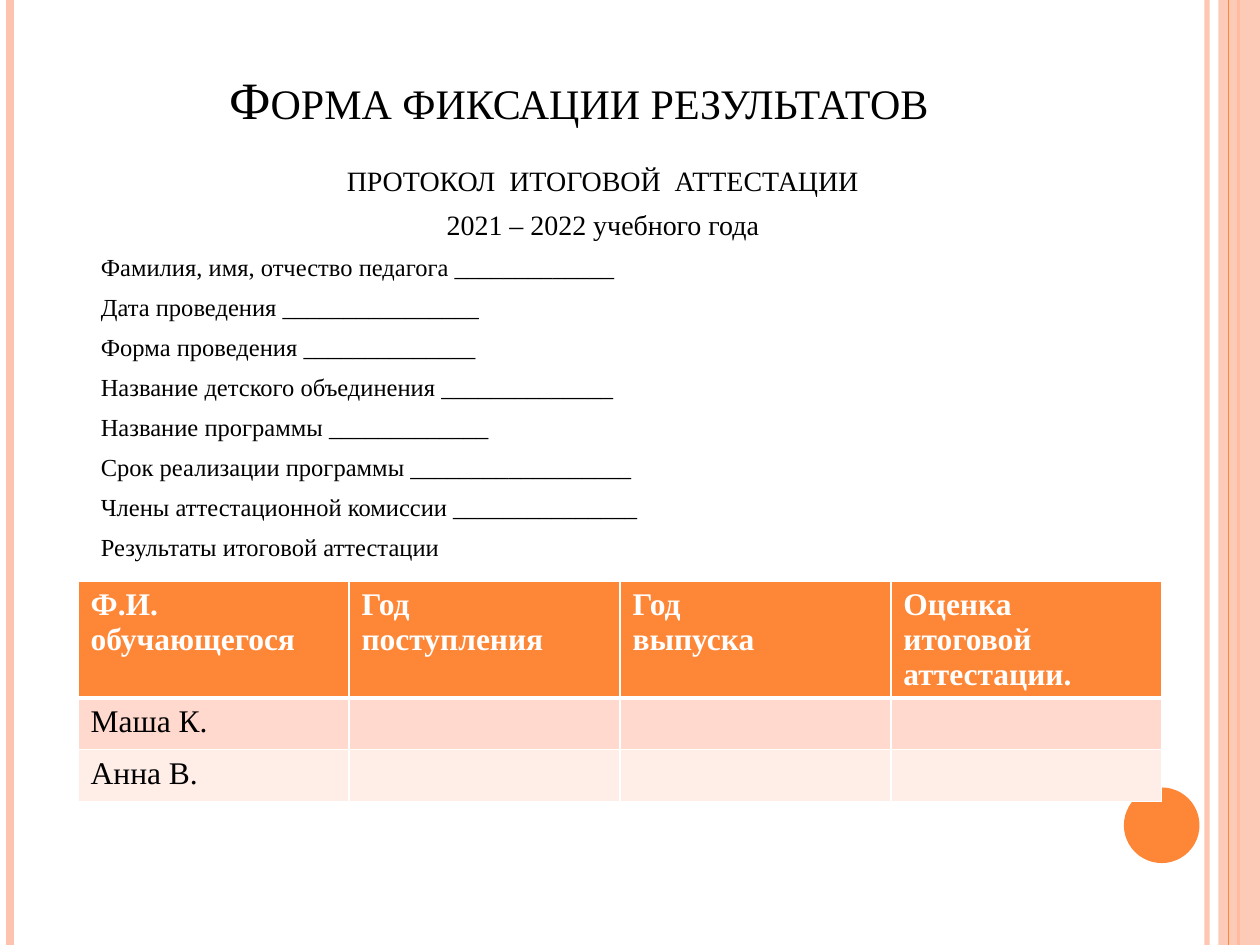
from pptx import Presentation
from pptx.dml.color import RGBColor
from pptx.enum.shapes import MSO_CONNECTOR, MSO_SHAPE
from pptx.enum.text import MSO_ANCHOR, MSO_AUTO_SIZE, PP_ALIGN
from pptx.oxml.ns import qn
from pptx.util import Inches, Pt
from lxml.etree import SubElement

THEME = {
    "font": "Times New Roman",
    "black": "000000", "white": "FFFFFF", "orange": "FE8637", "peach": "FEC3AE",
    "row_fills": ["FE8637", "FFD9CE", "FFEDE8"],
    "title": 30, "heading": 16, "field": 14, "table": 18, "space_before": 6,
}
WIDTH, HEIGHT = 10, 7.5

TITLE = "Форма фиксации результатов "
HEADINGS = ["ПРОТОКОЛ  ИТОГОВОЙ  АТТЕСТАЦИИ", "2021 – 2022 учебного года"]
FIELDS = [  # label, length of the blank to fill in
    ("Фамилия, имя, отчество педагога", 13),
    ("Дата проведения", 16),
    ("Форма проведения", 14),
    ("Название детского объединения", 14),
    ("Название программы", 13),
    ("Срок реализации программы", 18),
    ("Члены аттестационной комиссии", 15),
    ("Результаты итоговой аттестации", 0),
]
TABLE = [  # each cell is a list of paragraphs
    [["Ф.И. обучающегося"], ["Год", "поступления"], ["Год", "выпуска"],
     ["Оценка", "итоговой аттестации."]],
    [["Маша К."], [], [], []],
    [["Анна В."], [], [], []],
]
ROW_HEIGHTS = [0.92, 0.41, 0.41]
TABLE_LEFT, TABLE_TOP, COLUMN_WIDTH = 0.62, 4.61, 2.15

LEFT_RULES = [(9.58, "peach", 3, 93), (0.08, "peach", 4.5, 100), (9.83, "orange", 1.5, 100)]
RIGHT_RULE = (9.75, "orange", 0.75, 100)


def color(name):
    return RGBColor.from_string(THEME.get(name, name))


def box(left, top, width, height):
    return [Inches(value) for value in (left, top, width, height)]


def place(shape, *bounds):
    shape.left, shape.top, shape.width, shape.height = box(*bounds)


def set_alpha(properties, percent):
    """Make the first solid colour inside an element partly transparent."""
    if percent < 100:
        srgb = next(properties.iter(qn("a:srgbClr")))
        SubElement(srgb, qn("a:alpha"), val=str(percent * 1000))


def add_run(paragraph, text, size, color_name="black", bold=False):
    run = paragraph.add_run()
    run.text = text
    run.font.name = THEME["font"]
    run.font.size = Pt(size)
    run.font.bold = bold
    run.font.color.rgb = color(color_name)
    return run


def next_paragraph(frame, index):
    return frame.add_paragraph() if index else frame.paragraphs[0]


def add_rule(slide, x, color_name, weight, alpha):
    """Draw a vertical line over the full height of the slide."""
    line = slide.shapes.add_connector(
        MSO_CONNECTOR.STRAIGHT, Inches(x), 0, Inches(x), Inches(HEIGHT))
    line.line.width = Pt(weight)
    line.line.color.rgb = color(color_name)
    properties = line._element.spPr
    set_alpha(properties, alpha)
    SubElement(properties, qn("a:effectLst"))


def add_filled(slide, kind, bounds, color_name, alpha=100):
    shape = slide.shapes.add_shape(kind, *box(*bounds))
    shape.shadow.inherit = False
    shape.fill.solid()
    shape.fill.fore_color.rgb = color(color_name)
    set_alpha(shape._element.spPr, alpha)
    shape.line.fill.background()


def add_decoration(slide):
    for rule in LEFT_RULES:
        add_rule(slide, *rule)
    add_filled(slide, MSO_SHAPE.RECTANGLE, (9.67, 0, 0.33, HEIGHT), "peach", 87)
    add_rule(slide, *RIGHT_RULE)
    add_filled(slide, MSO_SHAPE.OVAL, (8.92, 6.25, 0.6, 0.6), "orange")


def fill_title(title):
    place(title, 0.55, 0.23, 8.17, 0.85)
    frame = title.text_frame
    frame.auto_size = MSO_AUTO_SIZE.NONE
    frame.vertical_anchor = MSO_ANCHOR.BOTTOM
    paragraph = frame.paragraphs[0]
    paragraph.alignment = PP_ALIGN.CENTER
    run = add_run(paragraph, TITLE, THEME["title"])
    run.font._element.set("cap", "small")


def fill_body(body):
    place(body, 0.7, 1.25, 8.17, 5.33)
    frame = body.text_frame
    frame.auto_size = MSO_AUTO_SIZE.NONE
    lines = [(text, THEME["heading"], PP_ALIGN.CENTER) for text in HEADINGS]
    lines += [(f"{label} {'_' * blank}".rstrip(), THEME["field"], PP_ALIGN.LEFT)
              for label, blank in FIELDS]
    for index, (text, size, alignment) in enumerate(lines):
        paragraph = next_paragraph(frame, index)
        paragraph.alignment = alignment
        paragraph.space_before = Pt(THEME["space_before"])
        properties = paragraph._p.get_or_add_pPr()
        properties.set("marL", str(Inches(0.3)))
        properties.set("indent", str(Inches(-0.3)))
        SubElement(properties, qn("a:buNone"))
        add_run(paragraph, text, size)


def set_borders(cell, bottom):
    """Put white borders on a cell; they must precede its fill."""
    properties = cell._tc.get_or_add_tcPr()
    for side, weight in (("L", 1), ("R", 1), ("T", 1), ("B", bottom)):
        border = SubElement(properties, qn(f"a:ln{side}"), w=str(Pt(weight)))
        fill = SubElement(border, qn("a:solidFill"))
        SubElement(fill, qn("a:srgbClr"), val=THEME["white"])


def add_results_table(slide):
    columns = len(TABLE[0])
    table = slide.shapes.add_table(len(TABLE), columns, *box(
        TABLE_LEFT, TABLE_TOP, COLUMN_WIDTH * columns, sum(ROW_HEIGHTS))).table
    for column in table.columns:
        column.width = Inches(COLUMN_WIDTH)
    for row_index, row in enumerate(TABLE):
        header = row_index == 0
        table.rows[row_index].height = Inches(ROW_HEIGHTS[row_index])
        for column_index, texts in enumerate(row):
            cell = table.cell(row_index, column_index)
            set_borders(cell, bottom=3 if header else 1)
            cell.fill.solid()
            cell.fill.fore_color.rgb = color(THEME["row_fills"][row_index])
            for index, text in enumerate(texts):
                add_run(next_paragraph(cell.text_frame, index), text, THEME["table"],
                        "white" if header else "black", bold=header)


def main():
    presentation = Presentation()
    presentation.slide_width, presentation.slide_height = Inches(WIDTH), Inches(HEIGHT)
    slide = presentation.slides.add_slide(presentation.slide_layouts[1])
    add_decoration(slide)
    fill_title(slide.shapes.title)
    fill_body(slide.placeholders[1])
    add_results_table(slide)
    presentation.save("out.pptx")


if __name__ == "__main__":
    main()
